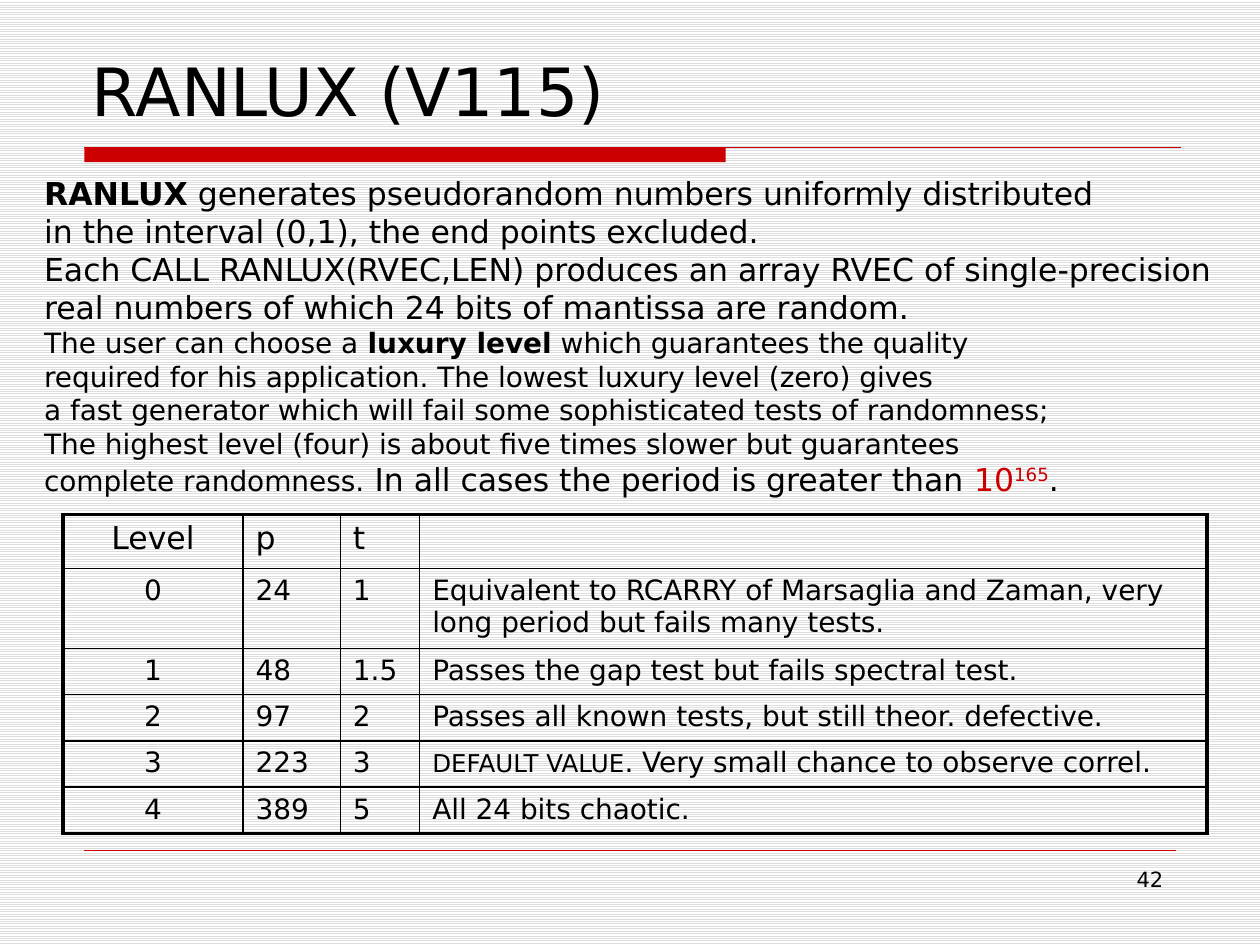
from lxml.etree import SubElement
from pptx import Presentation
from pptx.dml.color import RGBColor
from pptx.enum.dml import MSO_PATTERN
from pptx.enum.shapes import MSO_CONNECTOR, MSO_SHAPE
from pptx.enum.text import MSO_ANCHOR, MSO_AUTO_SIZE, PP_ALIGN
from pptx.oxml.ns import qn
from pptx.util import Cm, Pt

FONT = "DejaVu Sans"
BLACK = RGBColor(0, 0, 0)
RED = RGBColor(0xCC, 0, 0)
WHITE = RGBColor(0xFF, 0xFF, 0xFF)
STRIPE = RGBColor(0xDD, 0xDD, 0xDD)

BODY = [
    [("RANLUX", 18, "bold"),
     (" generates pseudorandom numbers uniformly distributed", 18, "")],
    [("in the interval (0,1), the end points excluded.", 18, "")],
    [("Each CALL RANLUX(RVEC,LEN) produces an array RVEC of single-precision", 18, "")],
    [("real numbers of which 24 bits of mantissa are random.", 18, "")],
    [("The user can choose a ", 16, ""), ("luxury level", 16, "bold"),
     (" which guarantees the quality", 16, "")],
    [("required for his application. The lowest luxury level (zero) gives", 16, "")],
    [("a fast generator which will fail some sophisticated tests of randomness;", 16, "")],
    [("The highest level (four) is about five times slower but guarantees", 16, "")],
    [("complete randomness.", 16, ""),
     (" In all cases the period is greater than ", 18, ""),
     ("10", 18, "red"), ("165", 18, "red super"), (".", 18, "")],
]

LEVELS = [
    ("Level", "p", "t", ""),
    ("0", "24", "1", "Equivalent to RCARRY of Marsaglia and Zaman, very "
                     "long period but fails many tests."),
    ("1", "48", "1.5", "Passes the gap test but fails spectral test."),
    ("2", "97", "2", "Passes all known tests, but still theor. defective."),
    ("3", "223", "3", "DEFAULT VALUE|. Very small chance to observe correl."),
    ("4", "389", "5", "All 24 bits chaotic."),
]
COLUMN_WIDTHS = (3.63, 1.96, 1.6, 15.87)
ROW_HEIGHTS = (1.09, 1.61, 0.93, 0.93, 0.93, 0.93)


def add_styled_run(paragraph, text, size, style=""):
    """Append a run with its size and a style of bold, red or super."""
    run = paragraph.add_run()
    run.text = text
    run.font.name = FONT
    run.font.size = Pt(size)
    run.font.bold = "bold" in style
    run.font.color.rgb = RED if "red" in style else BLACK
    if "super" in style:
        run._r.get_or_add_rPr().set("baseline", "30000")


def add_rule(slide, left, top, width, weight):
    """Draw a horizontal red line."""
    rule = slide.shapes.add_connector(
        MSO_CONNECTOR.STRAIGHT, Cm(left), Cm(top), Cm(left + width), Cm(top))
    rule.line.color.rgb = RED
    rule.line.width = Pt(weight)
    SubElement(rule._element.spPr, qn("a:effectLst"))


def add_header(slide, left, top, width):
    """Place the title with its red bar and rule below."""
    title = slide.shapes.title
    title.left, title.top = Cm(left), Cm(top)
    title.width, title.height = Cm(width), Cm(1.9)
    frame = title.text_frame
    frame.auto_size = MSO_AUTO_SIZE.NONE
    frame.vertical_anchor = MSO_ANCHOR.BOTTOM
    paragraph = frame.paragraphs[0]
    paragraph.alignment = PP_ALIGN.LEFT
    add_styled_run(paragraph, "RANLUX (V115)", 38)

    bar_left, bar_top = left + 0.1, top + 2.13
    bar = slide.shapes.add_shape(
        MSO_SHAPE.RECTANGLE, Cm(bar_left), Cm(bar_top), Cm(12.93), Cm(0.3))
    bar.shadow.inherit = False
    bar.fill.solid()
    bar.fill.fore_color.rgb = RED
    bar.line.fill.background()
    add_rule(slide, bar_left, bar_top, width, 0.75)


def add_description(slide, left, top, width, height):
    """Place the explanatory paragraphs."""
    box = slide.shapes.add_textbox(Cm(left), Cm(top), Cm(width), Cm(height))
    frame = box.text_frame
    frame.word_wrap = True
    frame.auto_size = MSO_AUTO_SIZE.SHAPE_TO_FIT_TEXT
    for index, parts in enumerate(BODY):
        paragraph = frame.add_paragraph() if index else frame.paragraphs[0]
        for text, size, style in parts:
            add_styled_run(paragraph, text, size, style)


def set_borders(cell, weights):
    """Give a cell black borders, weights in points by side."""
    properties = cell._tc.get_or_add_tcPr()
    for side, weight in weights.items():
        line = SubElement(properties, qn(f"a:ln{side}"), w=str(Pt(weight)))
        fill = SubElement(line, qn("a:solidFill"))
        SubElement(fill, qn("a:srgbClr"), val=str(BLACK))


def add_level_table(slide, left, top):
    """Place the table of luxury levels with a heavy outer frame."""
    last_row, last_column = len(LEVELS) - 1, len(COLUMN_WIDTHS) - 1
    table = slide.shapes.add_table(
        len(LEVELS), len(COLUMN_WIDTHS), Cm(left), Cm(top),
        Cm(sum(COLUMN_WIDTHS)), Cm(sum(ROW_HEIGHTS))).table
    table.first_row = table.horz_banding = False
    for column, width in zip(table.columns, COLUMN_WIDTHS):
        column.width = Cm(width)
    for row, height in zip(table.rows, ROW_HEIGHTS):
        row.height = Cm(height)
    for i, values in enumerate(LEVELS):
        for j, value in enumerate(values):
            cell = table.cell(i, j)
            outer = {"L": j == 0, "R": j == last_column,
                     "T": i == 0, "B": i == last_row}
            set_borders(cell, {side: 2.25 if edge else 1 for side, edge in outer.items()})
            cell.fill.background()
            paragraph = cell.text_frame.paragraphs[0]
            paragraph.alignment = PP_ALIGN.LEFT if j else PP_ALIGN.CENTER
            small, bar, normal = value.rpartition("|")
            if small:
                add_styled_run(paragraph, small, 14)
            if normal:
                add_styled_run(paragraph, normal, 16 if i else 18)


def add_footer(slide, left, top, width):
    """Place the thin rule and the slide number under its right end."""
    add_rule(slide, left, top, width, 0.25)
    number_width = 5.5
    box = slide.shapes.add_textbox(
        Cm(left + width - number_width), Cm(top + 0.21), Cm(number_width), Cm(1.32))
    box.text_frame.word_wrap = True
    paragraph = box.text_frame.paragraphs[0]
    paragraph.alignment = PP_ALIGN.RIGHT
    add_styled_run(paragraph, "42", 12)


def main():
    """Build and save the presentation."""
    presentation = Presentation()
    presentation.slide_width, presentation.slide_height = Cm(25.4), Cm(19.05)
    slide = presentation.slides.add_slide(presentation.slide_layouts[5])
    background = slide.background.fill
    background.patterned()
    background.pattern = MSO_PATTERN.LIGHT_HORIZONTAL
    background.fore_color.rgb = STRIPE
    background.back_color.rgb = WHITE
    add_header(slide, 1.6, 0.84, 22.1)
    add_description(slide, 0.64, 3.39, 24.55, 6.77)
    add_level_table(slide, 1.27, 10.37)
    add_footer(slide, 1.7, 17.14, 22)
    presentation.save("out.pptx")


if __name__ == "__main__":
    main()
